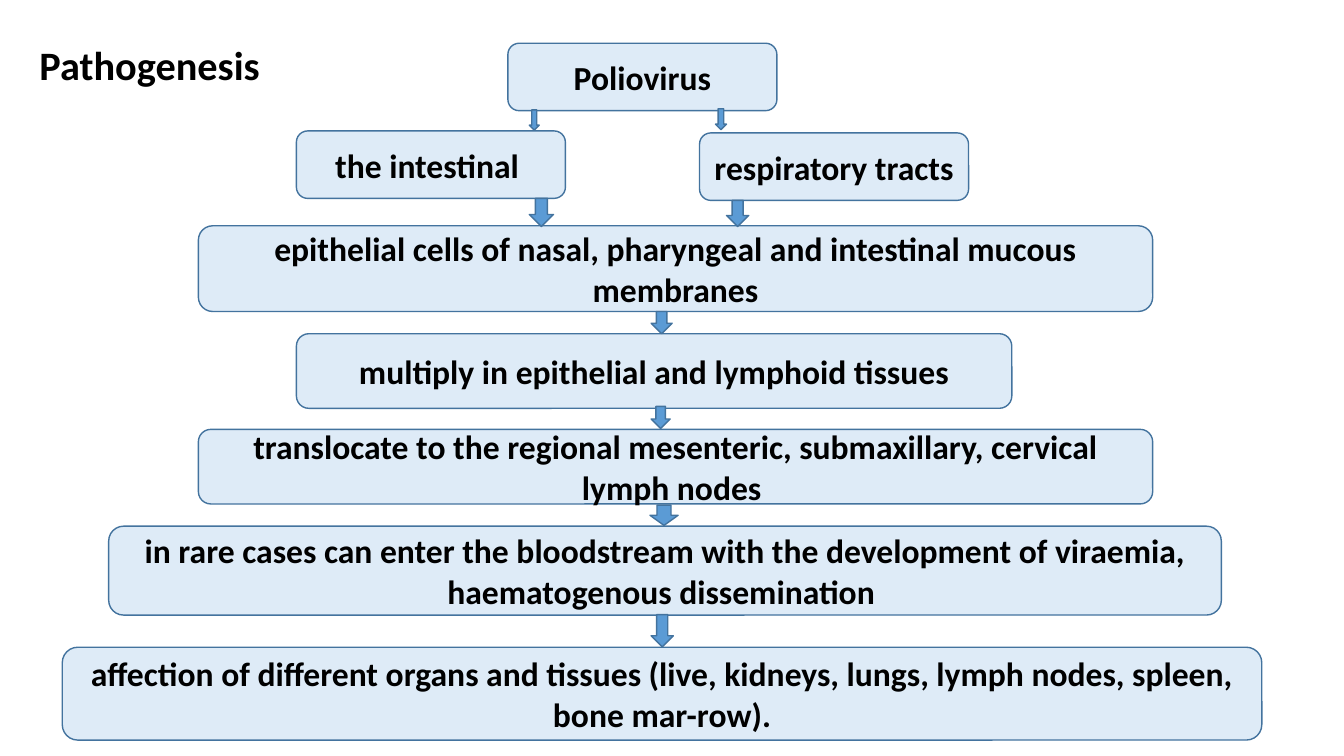
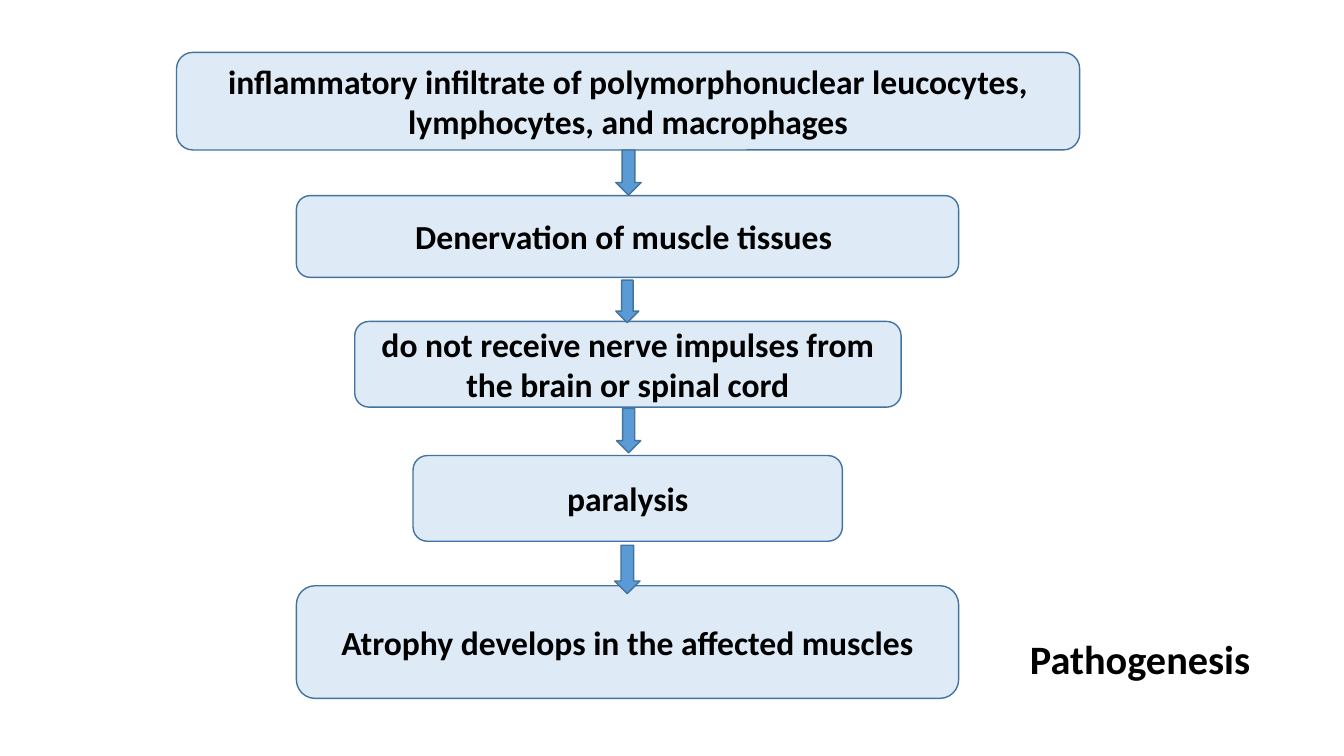
from pptx import Presentation
from pptx.dml.color import RGBColor
from pptx.enum.shapes import MSO_SHAPE
from pptx.enum.text import MSO_ANCHOR, MSO_AUTO_SIZE, PP_ALIGN
from pptx.util import Cm, Pt

ROUNDED = MSO_SHAPE.ROUNDED_RECTANGLE
DOWN_ARROW = MSO_SHAPE.DOWN_ARROW
TOP, MIDDLE = MSO_ANCHOR.TOP, MSO_ANCHOR.MIDDLE
LEFT, CENTER = PP_ALIGN.LEFT, PP_ALIGN.CENTER
NO_AUTOFIT = MSO_AUTO_SIZE.NONE

BLACK = RGBColor(0x00, 0x00, 0x00)
PALE_BLUE = RGBColor(0xDE, 0xEB, 0xF7)
ARROW_BLUE = RGBColor(0x5B, 0x9B, 0xD5)
OUTLINE_BLUE = RGBColor(0x43, 0x73, 0x9E)
FONT = "Calibri"
TITLE = "Pathogenesis"

FLOWCHARTS = [
    {
        "title": (0.74, 1.14, 29.21, 2.13),
        "title_inset": 0,
        "steps": [
            ("Poliovirus", 12.8, 1.09, 6.78, 1.7),
            ("respiratory tracts", 17.63, 3.35, 6.78, 1.7),
            ("the intestinal ", 7.47, 3.3, 6.78, 1.7),
            ("epithelial cells of nasal, pharyngeal and intestinal mucous membranes",
             5, 5.69, 24.05, 2.16),
            ("multiply in epithelial and lymphoid tissues", 7.47, 8.41, 18.03, 1.88),
            ("translocate to the regional mesenteric, submaxillary, cervical lymph nodes ",
             5, 10.82, 24.05, 1.88),
            ("in rare cases can enter the bloodstream with the development of viraemia, "
             "haematogenous dissemination ", 2.74, 13.26, 28.04, 2.24),
            ("affection of different organs and tissues (live, kidneys, lungs, lymph nodes, "
             "spleen, bone mar-row).", 1.57, 16.31, 30.23, 2.34),
        ],
        "arrows": [
            (13.34, 2.77, 0.25, 0.51),
            (18.03, 2.74, 0.28, 0.53),
            (13.34, 5, 0.61, 0.71),
            (18.31, 5.05, 0.56, 0.66),
            (16.41, 7.85, 0.53, 0.56),
            (16.41, 10.24, 0.48, 0.56),
            (16.38, 12.73, 0.71, 0.51),
            (16.41, 15.49, 0.56, 0.81),
        ],
    },
    {
        "title": (25.7, 15.88, 7.52, 2.69),
        "title_inset": 0.25,
        "steps": [
            ("inflammatory infiltrate of polymorphonuclear leucocytes, lymphocytes, "
             "and macrophages", 4.45, 1.32, 22.76, 2.46),
            ("Denervation of muscle tissues ", 7.47, 4.93, 16.69, 2.06),
            ("do not receive nerve impulses from the brain or spinal cord",
             8.94, 8.1, 13.77, 2.16),
            ("paralysis", 10.41, 11.48, 10.82, 2.16),
            ("Atrophy develops in the affected muscles", 7.47, 14.76, 16.69, 2.84),
        ],
        "arrows": [
            (15.52, 3.78, 0.64, 1.14),
            (15.52, 7.06, 0.58, 1.07),
            (15.54, 10.29, 0.61, 1.12),
            (15.49, 13.74, 0.64, 1.22),
        ],
    },
]


def style_text(paragraph, size, alignment):
    paragraph.alignment = alignment
    paragraph.font.name = FONT
    paragraph.font.size = Pt(size)
    paragraph.font.bold = True
    paragraph.font.color.rgb = BLACK


def add_outlined(slide, preset, box, fill):
    outlined = slide.shapes.add_shape(preset, *[Cm(length) for length in box])
    outlined.shadow.inherit = False
    outlined.fill.solid()
    outlined.fill.fore_color.rgb = fill
    outlined.line.color.rgb = OUTLINE_BLUE
    outlined.line.width = Pt(1)
    return outlined


deck = Presentation()
deck.slide_width, deck.slide_height = Cm(33.87), Cm(19.05)
title_only = deck.slide_layouts[5]

for flowchart in FLOWCHARTS:
    slide = deck.slides.add_slide(title_only)

    heading = slide.shapes.title
    heading.left, heading.top, heading.width, heading.height = [
        Cm(length) for length in flowchart["title"]
    ]
    heading_frame = heading.text_frame
    heading_frame.text = TITLE
    heading_frame.auto_size = NO_AUTOFIT
    heading_frame.vertical_anchor = TOP
    heading_frame.margin_top = Cm(flowchart["title_inset"])
    heading_frame.paragraphs[0].line_spacing = 0.9
    style_text(heading_frame.paragraphs[0], 28.8, LEFT)

    for wording, *box in flowchart["steps"]:
        step_frame = add_outlined(slide, ROUNDED, box, PALE_BLUE).text_frame
        step_frame.text = wording
        step_frame.word_wrap = True
        step_frame.vertical_anchor = MIDDLE
        style_text(step_frame.paragraphs[0], 24, CENTER)

    for box in flowchart["arrows"]:
        add_outlined(slide, DOWN_ARROW, box, ARROW_BLUE)

deck.save("out.pptx")
